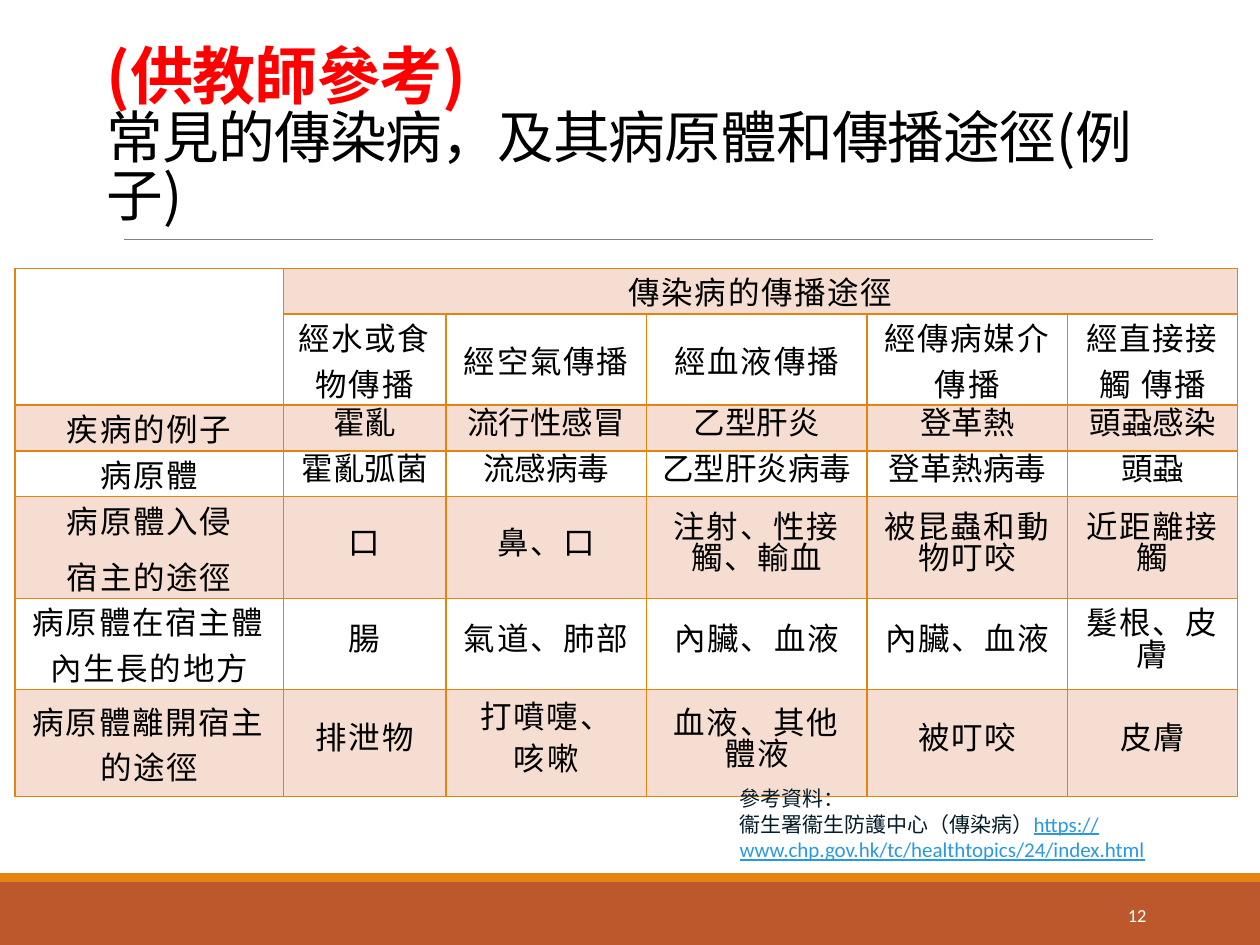
from lxml.etree import SubElement
from pptx import Presentation
from pptx.dml.color import RGBColor
from pptx.enum.shapes import MSO_CONNECTOR, MSO_SHAPE
from pptx.enum.text import MSO_ANCHOR, MSO_AUTO_SIZE, PP_ALIGN
from pptx.oxml.ns import qn
from pptx.util import Cm, Pt

COLORS = {
    "band": "BD582C", "accent": "E48312", "rule": "808080", "title": "FF0000",
    "text": "000000", "tint": "F5DDD2", "source": "061C28", "link": "2998E3",
    "number": "FFFFFF",
}
CJK_FONT = "Noto Sans CJK SC"
LATIN_FONT = "Calibri"

COLUMN_WIDTHS = [5.41, 3.28, 4.04, 4.45, 4.04, 3.43]
ROW_HEIGHTS = [0.91, 1.27, 0.91, 0.91, 1.85, 1.27, 2.16]
HEADER_ROWS = 2
UNSPACED_ROWS = (2, 3)
ROWS = [
    ["", "傳染病的傳播途徑", "", "", "", ""],
    ["", "經水或食物傳播", "經空氣傳播", "經血液傳播", "經傳病媒介 傳播", "經直接接觸 傳播"],
    ["疾病的例子", "霍亂", "流行性感冒", "乙型肝炎", "登革熱", "頭蝨感染"],
    ["病原體", "霍亂弧菌", "流感病毒", "乙型肝炎病毒", "登革熱病毒", "頭蝨"],
    ["病原體入侵\n宿主的途徑", "口", "鼻、口", "注射、性接觸、輸血", "被昆蟲和動物叮咬", "近距離接觸"],
    ["病原體在宿主體內生長的地方", "腸", "氣道、肺部", "內臟、血液", "內臟、血液", "髮根、皮膚"],
    ["病原體離開宿主的途徑", "排泄物", "打噴嚏、\n咳嗽", "血液、其他體液", "被叮咬", "皮膚"],
]


def color(name):
    return RGBColor.from_string(COLORS[name])


def write(paragraph, text, size=18, font=CJK_FONT, ink="text", bold=False,
          underline=False, spacing=0):
    """Append a formatted run; spacing is the letter spacing in points."""
    run = paragraph.add_run()
    run.text = text
    run.font.size = Pt(size)
    run.font.name = font
    run.font.bold = bold
    run.font.underline = underline
    run.font.color.rgb = color(ink)
    properties = run.font._element
    properties.set("spc", str(int(spacing * 100)))
    SubElement(properties, qn("a:ea"), typeface=CJK_FONT)


def add_bar(slide, top, height, fill):
    bar = slide.shapes.add_shape(MSO_SHAPE.RECTANGLE, 0, Cm(top), Cm(25.4), Cm(height))
    bar.shadow.inherit = False
    bar.fill.solid()
    bar.fill.fore_color.rgb = color(fill)
    bar.line.fill.background()


def add_rule(slide, left, right, top):
    rule = slide.shapes.add_connector(
        MSO_CONNECTOR.STRAIGHT, Cm(left), Cm(top), Cm(right), Cm(top))
    rule.line.color.rgb = color("rule")
    rule.line.width = Pt(0.5)
    SubElement(rule._element.spPr, qn("a:effectLst"))


def add_text_box(slide, left, top, width, height):
    box = slide.shapes.add_textbox(Cm(left), Cm(top), Cm(width), Cm(height))
    box.text_frame.word_wrap = True
    return box.text_frame


def fill_title(slide):
    title = slide.shapes.title
    title.left, title.top, title.width, title.height = Cm(1.9), Cm(0.84), Cm(22.2), Cm(3.89)
    frame = title.text_frame
    frame.word_wrap = True
    frame.auto_size = MSO_AUTO_SIZE.NONE
    frame.vertical_anchor = MSO_ANCHOR.BOTTOM
    paragraph = frame.paragraphs[0]
    paragraph.alignment = PP_ALIGN.LEFT
    paragraph.line_spacing = 0.85
    write(paragraph, "(供教師參考)", size=36, ink="title", bold=True, spacing=-0.5)
    paragraph.add_line_break()
    write(paragraph, "常見的傳染病，及其病原體和傳播途徑(例子)", size=32.4, spacing=-0.5)


def set_borders(cell):
    properties = cell._tc.get_or_add_tcPr()
    for side in ("lnL", "lnR", "lnT", "lnB"):
        line = SubElement(properties, qn(f"a:{side}"), w=str(Pt(1)))
        fill = SubElement(line, qn("a:solidFill"))
        SubElement(fill, qn("a:srgbClr"), val=COLORS["accent"])


def fill_cell(cell, text, tinted, line_spacing, spacing):
    set_borders(cell)
    if tinted:
        cell.fill.solid()
        cell.fill.fore_color.rgb = color("tint")
    else:
        cell.fill.background()
    cell.vertical_anchor = MSO_ANCHOR.MIDDLE
    cell.margin_left = cell.margin_right = Cm(0.28)
    cell.margin_top = cell.margin_bottom = 0
    if not text:
        return
    for index, line in enumerate(text.split("\n")):
        paragraph = cell.text_frame.paragraphs[0] if index == 0 else cell.text_frame.add_paragraph()
        paragraph.alignment = PP_ALIGN.CENTER
        paragraph.line_spacing = line_spacing
        if index:
            paragraph.space_before = Pt(6)
        write(paragraph, line, spacing=spacing)


def add_disease_table(slide):
    table = slide.shapes.add_table(
        len(ROWS), len(COLUMN_WIDTHS), Cm(0.3), Cm(5.41),
        Cm(sum(COLUMN_WIDTHS)), Cm(sum(ROW_HEIGHTS))).table
    table.first_row = table.horz_banding = False
    for column, width in zip(table.columns, COLUMN_WIDTHS):
        column.width = Cm(width)
    for row, height in zip(table.rows, ROW_HEIGHTS):
        row.height = Cm(height)
    for row_index, texts in enumerate(ROWS):
        for column_index, text in enumerate(texts):
            is_header = row_index < HEADER_ROWS or column_index == 0
            is_corner = row_index < HEADER_ROWS and column_index == 0
            fill_cell(
                table.cell(row_index, column_index), text,
                tinted=row_index % 2 == 0 and not is_corner,
                line_spacing=None if is_header else Pt(18),
                spacing=0 if row_index in UNSPACED_ROWS and not is_header else 1)
    table.cell(0, 0).merge(table.cell(1, 0))
    table.cell(0, 1).merge(table.cell(0, 5))


def add_source(slide):
    frame = add_text_box(slide, 14.66, 15.72, 10.69, 2.31)
    style = {"size": 12, "font": LATIN_FONT}
    write(frame.paragraphs[0], "參考資料：", ink="source", **style)
    paragraph = frame.add_paragraph()
    write(paragraph, "衞生署衞生防護中心（傳染病）", ink="source", **style)
    write(paragraph, "https://www.chp.gov.hk/tc/healthtopics/24/index.html",
          ink="link", underline=True, **style)


def add_page_number(slide):
    frame = add_text_box(slide, 20.62, 17.93, 2.74, 1.02)
    frame.vertical_anchor = MSO_ANCHOR.MIDDLE
    frame.paragraphs[0].alignment = PP_ALIGN.RIGHT
    write(frame.paragraphs[0], "12", size=10.5, font=LATIN_FONT, ink="number")


def main():
    presentation = Presentation()
    presentation.slide_width, presentation.slide_height = Cm(25.4), Cm(19.05)
    slide = presentation.slides.add_slide(presentation.slide_layouts[5])
    add_bar(slide, 17.78, 1.27, "band")
    add_bar(slide, 17.6, 0.18, "accent")
    add_rule(slide, 2.49, 23.24, 4.83)
    fill_title(slide)
    add_disease_table(slide)
    add_source(slide)
    add_page_number(slide)
    presentation.save("out.pptx")


if __name__ == "__main__":
    main()
